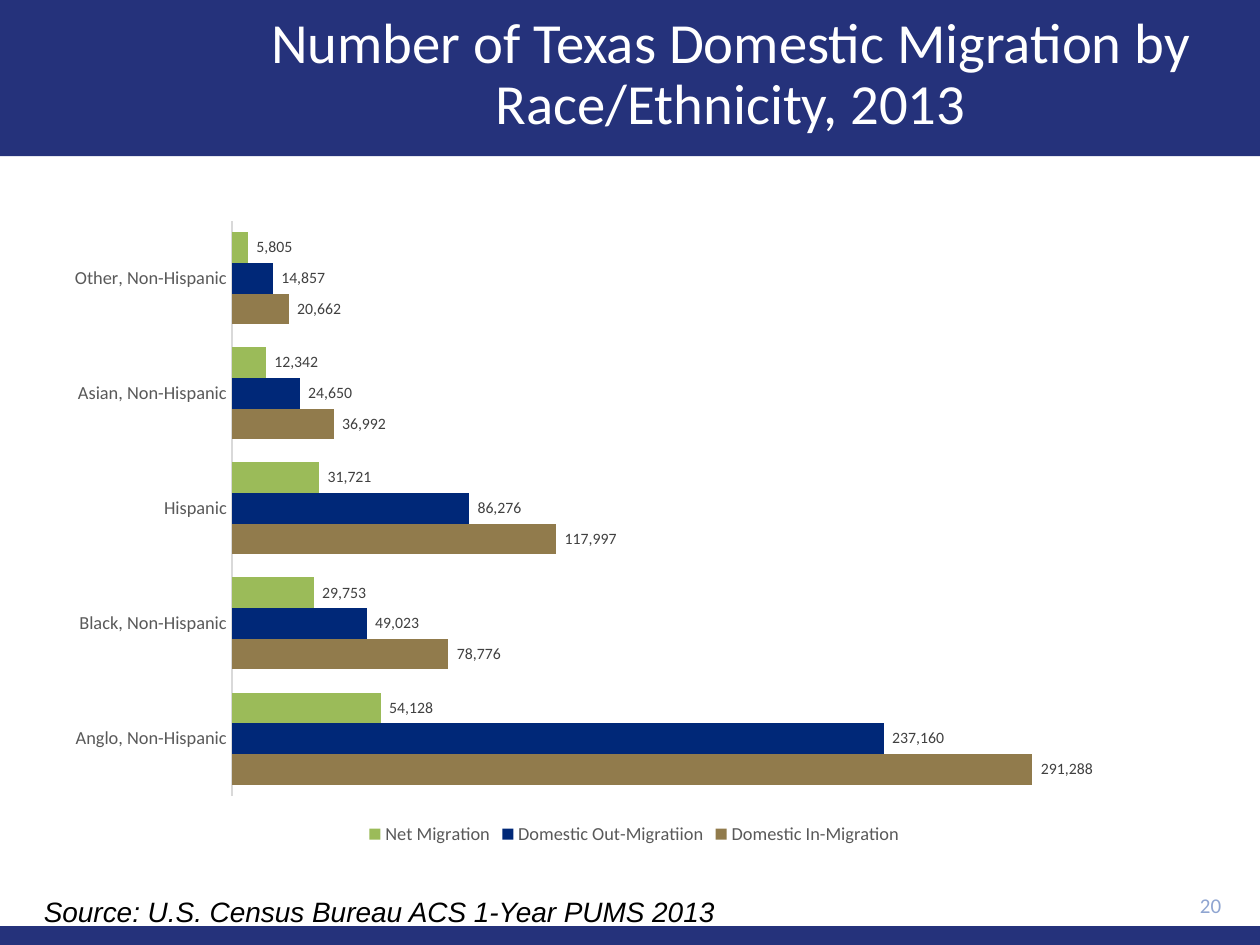
"""Build the slide on Texas domestic migration by race and ethnicity."""
from pptx import Presentation
from pptx import util as u
from pptx.chart import data as chart_data
from pptx.dml import color
from pptx.enum import chart as charts, shapes, text

COLORS = {"band": "25327B", "white": "FFFFFF", "number": "8FA5D1", "black": "000000",
          "axis_text": "595959", "axis_line": "D9D9D9", "label": "404040",
          "in": "917B4C", "out": "002878", "net": "9BBB59"}
NUMBER_FORMAT = '_(* #,##0_);_(* \\(#,##0\\);_(* "-"??_);_('


def rgb(name):
    return color.RGBColor.from_string(COLORS[name])


def format_font(font, color_name, **values):
    for name, value in values.items():
        setattr(font, name, value)
    font.color.rgb = rgb(color_name)


presentation = Presentation()
presentation.slide_width, presentation.slide_height = u.Pt(720), u.Pt(540)
slide = presentation.slides.add_slide(presentation.slide_layouts[5])

for top, height in [(0, 89.3), (529.2, 10.8)]:
    band = slide.shapes.add_shape(shapes.MSO_SHAPE.RECTANGLE,
                                  u.Pt(0), u.Pt(top), u.Pt(720), u.Pt(height))
    band.shadow.inherit = False
    band.fill.solid()
    band.fill.fore_color.rgb = rgb("band")
    band.line.fill.background()

title = slide.shapes.title
slide.shapes._spTree.append(title._element)
for name, value in {"left": 122.4, "top": 7.2, "width": 590.4, "height": 72}.items():
    setattr(title, name, u.Pt(value))
title.text_frame.text = "Number of Texas Domestic Migration by Race/Ethnicity, 2013"
title.text_frame.vertical_anchor = text.MSO_ANCHOR.MIDDLE
title.text_frame.auto_size = text.MSO_AUTO_SIZE.NONE
paragraph = title.text_frame.paragraphs[0]
paragraph.alignment = text.PP_ALIGN.CENTER
paragraph.line_spacing = 0.9
format_font(paragraph.font, "white", name="Calibri", size=u.Pt(32.4))

migration = chart_data.CategoryChartData(number_format=NUMBER_FORMAT)
migration.categories = ["Anglo, Non-Hispanic", "Black, Non-Hispanic", "Hispanic",
                        "Asian, Non-Hispanic", "Other, Non-Hispanic"]
migration.add_series("Domestic In-Migration", [291288, 78776, 117997, 36992, 20662])
migration.add_series("Domestic Out-Migratiion", [237160, 49023, 86276, 24650, 14857])
migration.add_series("Net Migration", [54128, 29753, 31721, 12342, 5805])
chart = slide.shapes.add_chart(charts.XL_CHART_TYPE.BAR_CLUSTERED, u.Pt(29.5), u.Pt(118.8),
                               u.Pt(666), u.Pt(367.2), migration).chart
chart.has_title = False
format_font(chart.font, "black", name="Calibri", size=u.Pt(10))

chart.has_legend = True
chart.legend.position = charts.XL_LEGEND_POSITION.BOTTOM
chart.legend.include_in_layout = False
category_axis, value_axis = chart.category_axis, chart.value_axis
category_axis.major_tick_mark = charts.XL_TICK_MARK.NONE
category_axis.format.line.color.rgb = rgb("axis_line")
category_axis.format.line.width = u.Pt(0.75)
for font in (chart.legend.font, category_axis.tick_labels.font):
    format_font(font, "axis_text", name="Calibri", size=u.Pt(10.5))
value_axis.visible = False
value_axis.has_major_gridlines = False
value_axis.minimum_scale, value_axis.maximum_scale = 0, 350000

plot = chart.plots[0]
plot.gap_width = 75
plot.vary_by_categories = False
for series, color_name in zip(plot.series, ["in", "out", "net"]):
    series.format.fill.solid()
    series.format.fill.fore_color.rgb = rgb(color_name)
    labels = series.data_labels
    labels.show_value = True
    labels.number_format = NUMBER_FORMAT
    labels.number_format_is_linked = False
    labels.position = charts.XL_LABEL_POSITION.OUTSIDE_END
    format_font(labels.font, "label", name="Calibri", size=u.Pt(9))

notes = [
    ("20", 640.8, 64.1, text.PP_ALIGN.RIGHT, text.MSO_ANCHOR.MIDDLE, 1, "number",
     {"name": "Calibri", "size": u.Pt(12)}),
    ("Source: U.S. Census Bureau ACS 1-Year PUMS 2013", 18, 491.8, text.PP_ALIGN.LEFT,
     text.MSO_ANCHOR.TOP, 1.15, "black", {"name": "Arial", "size": u.Pt(16), "italic": True}),
]
for words, left, width, alignment, anchor, spacing, color_name, values in notes:
    box = slide.shapes.add_textbox(u.Pt(left), u.Pt(504.7), u.Pt(width), u.Pt(24.5))
    box.text_frame.word_wrap = True
    box.text_frame.vertical_anchor = anchor
    paragraph = box.text_frame.paragraphs[0]
    paragraph.text = words
    paragraph.alignment = alignment
    paragraph.line_spacing = spacing
    format_font(paragraph.font, color_name, **values)

presentation.save("out.pptx")
